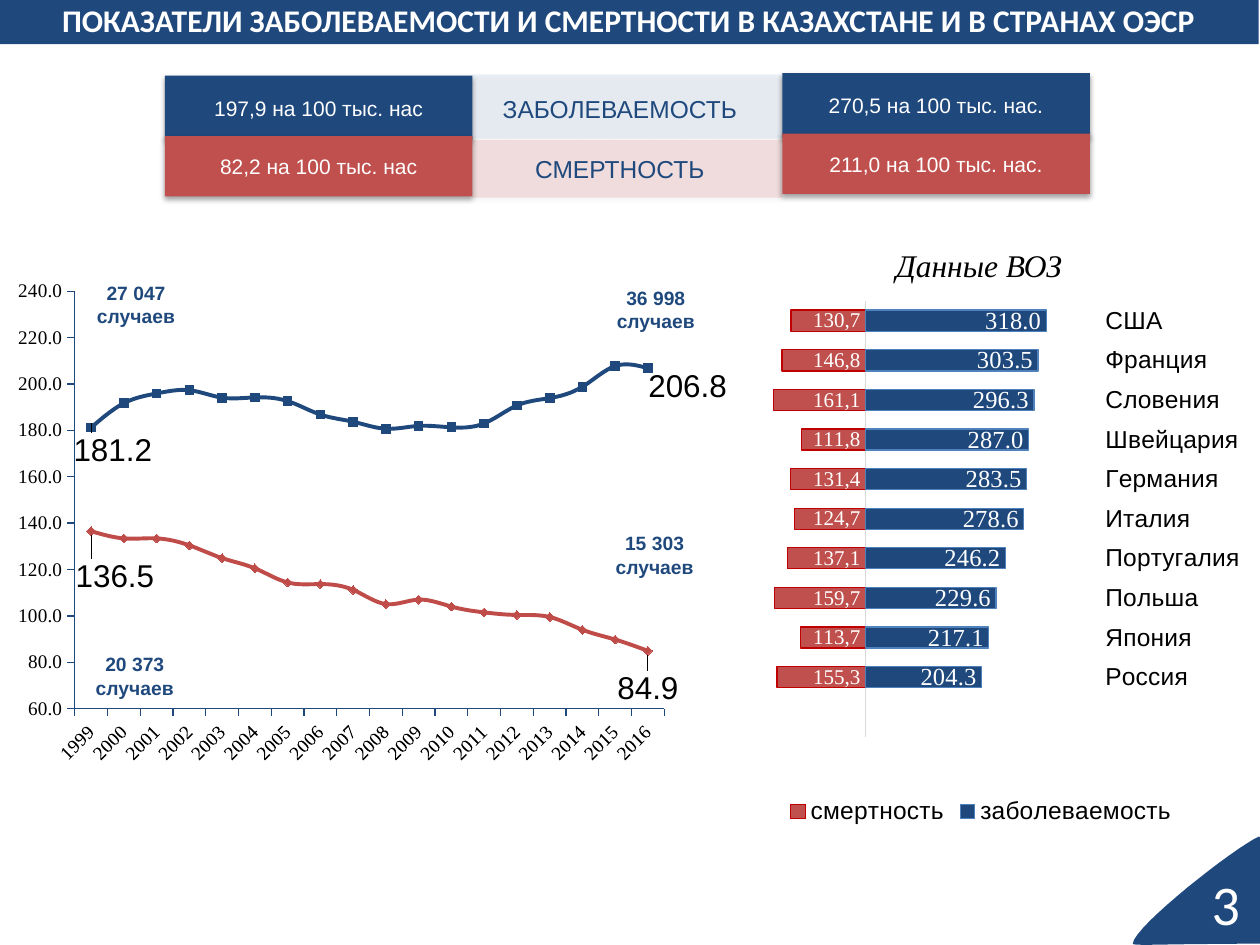
from lxml.etree import SubElement
from pptx import Presentation
from pptx.chart.data import CategoryChartData
from pptx.dml.color import RGBColor
from pptx.enum.chart import XL_CHART_TYPE as ChartType, XL_LABEL_POSITION as LabelPos
from pptx.enum.chart import XL_LEGEND_POSITION as LegendPos, XL_MARKER_STYLE as Marker
from pptx.enum.chart import XL_TICK_LABEL_POSITION as TickLabelPos, XL_TICK_MARK as TickMark
from pptx.enum.shapes import MSO_SHAPE as Shape
from pptx.enum.text import MSO_ANCHOR as Anchor, PP_ALIGN as Align
from pptx.oxml import parse_xml
from pptx.oxml.ns import nsdecls, qn
from pptx.util import Inches, Pt

NAVY = RGBColor(0x1F, 0x49, 0x7D)
RED = RGBColor(0xC0, 0x50, 0x4D)
LINE_RED = RGBColor(0xBF, 0x4C, 0x48)
DARK_RED = RGBColor(0xC0, 0x00, 0x00)
BLUE = RGBColor(0x4F, 0x81, 0xBD)
GREY = RGBColor(0xD9, 0xD9, 0xD9)
BLACK = RGBColor(0, 0, 0)
WHITE = RGBColor(255, 255, 255)
SERIF = "Times New Roman"

TITLE = "ПОКАЗАТЕЛИ ЗАБОЛЕВАЕМОСТИ И СМЕРТНОСТИ В КАЗАХСТАНЕ И В СТРАНАХ ОЭСР"
# left, top, incidence, mortality
RATES = [
    (6.21, 0.58, "270,5 на 100 тыс. нас.", "211,0 на 100 тыс. нас."),
    (1.31, 0.6, "197,9 на 100 тыс. нас", "82,2 на 100 тыс. нас"),
]
CASES = [
    ("20 373\nслучаев", (0.6, 5.14, 0.94, 0.45)),
    ("15 303\nслучаев", (4.6, 4.18, 1.19, 0.45)),
    ("27 047\nслучаев", (0.66, 2.19, 0.84, 0.45)),
    ("36 998\nслучаев", (4.72, 2.23, 0.97, 0.45)),
]
YEARS = [str(year) for year in range(1999, 2017)]
# name, values, colour, marker colour, marker, label side, label shifts by point
TRENDS = [
    ("Series 1", [181.2, 191.7, 195.9, 197.3, 194.1, 194.2, 192.6, 186.8, 183.7,
                  180.7, 181.9, 181.3, 183, 190.7, 193.9, 198.8, 207.7, 206.8],
     NAVY, NAVY, Marker.SQUARE, LabelPos.ABOVE, {0: (0.03, 0.1), 17: (0.055, 0.09)}),
    ("Series 2", [136.5, 133.4, 133.4, 130.4, 124.9, 120.5, 114.4, 113.7, 111.2,
                  105.1, 107, 104, 101.5, 100.4, 99.5, 94, 89.8, 84.9],
     LINE_RED, RED, Marker.DIAMOND, LabelPos.BELOW, {0: (0.033, 0.036), 17: (0, 0.02)}),
]
# country, mortality, incidence; the first row is left empty
COUNTRIES = [
    ("", None, None), ("Россия", 155.3, 204.3), ("Япония", 113.7, 217.1),
    ("Польша", 159.7, 229.6), ("Португалия", 137.1, 246.2), ("Италия", 124.7, 278.6),
    ("Германия", 131.4, 283.5), ("Швейцария", 111.8, 287), ("Словения", 161.1, 296.3),
    ("Франция", 146.8, 303.5), ("США", 130.7, 318),
]
CORNER_START = (8.99, 7.49)
CORNER_CURVES = [
    ((9, 7.35), (9.81, 6.72), (9.99, 6.64)),
    ((10.01, 6.64), (10, 6.69), (10.01, 6.83)),
    ((10.01, 6.97), (10, 7.26), (10, 7.49)),
    ((9.25, 7.49), (8.99, 7.51), (8.99, 7.49)),
]


def set_font(font, size, color, name="Arial", bold=False, italic=False):
    font.size, font.name, font.bold, font.italic = Pt(size), name, bold, italic
    font.color.rgb = color


def write(shape, text, size, color, align=Align.CENTER, anchor=Anchor.TOP,
          inset=(0.1, 0.05), gap=0, **style):
    frame = shape.text_frame
    frame.word_wrap, frame.vertical_anchor = True, anchor
    frame.margin_left = frame.margin_right = Inches(inset[0])
    frame.margin_top = frame.margin_bottom = Inches(inset[1])
    for number, line in enumerate(text.split("\n")):
        para = frame.add_paragraph() if number else frame.paragraphs[0]
        para.alignment = align
        if number and gap:
            para.space_before = Pt(gap)
        span = para.add_run()
        span.text = line
        set_font(span.font, size, color, **style)


def add_text(page, area, text, size, color, **style):
    write(page.shapes.add_textbox(*map(Inches, area)), text, size, color, **style)


def add_block(page, area, color, alpha=None, shadow=True):
    box = page.shapes.add_shape(Shape.RECTANGLE, *map(Inches, area))
    box.shadow.inherit = False
    box.fill.solid()
    box.fill.fore_color.rgb = color
    box.line.fill.background()
    properties = box._element.spPr
    if alpha:
        fill = properties.find(qn("a:solidFill"))
        SubElement(fill[0], qn("a:alpha"), val=str(alpha * 1000))
    if shadow:
        properties.find(qn("a:effectLst")).append(parse_xml(
            f'<a:outerShdw {nsdecls("a")} blurRad="{Pt(3.1)}" dist="{Pt(1.6)}" dir="5400000">'
            '<a:srgbClr val="000000"><a:alpha val="38000"/></a:srgbClr></a:outerShdw>'))
    return box


def manual_layout(x, y, size=None):
    """Plot area layout when size is given, label shift otherwise."""
    tags = [("x", x), ("y", y)]
    if size:
        tags = [("layoutTarget", "inner"), ("xMode", "edge"), ("yMode", "edge"),
                *tags, ("w", size[0]), ("h", size[1])]
    body = "".join(f'<c:{tag} val="{value}"/>' for tag, value in tags)
    return parse_xml(f'<c:layout {nsdecls("c")}><c:manualLayout>{body}</c:manualLayout></c:layout>')


def add_chart(page, kind, area, categories, series, plot, size):
    data = CategoryChartData()
    data.categories = categories
    for name, values in series:
        data.add_series(name, values)
    chart = page.shapes.add_chart(kind, *map(Inches, area), data).chart
    chart.has_title = chart.has_legend = False
    set_font(chart.font, size, BLACK, SERIF)
    chart.value_axis.has_major_gridlines = False
    plot_area = chart._chartSpace.chart.plotArea
    for old in plot_area.findall(qn("c:layout")):
        plot_area.remove(old)
    plot_area.insert(0, manual_layout(*plot))
    chart.plots[0].vary_by_categories = False
    return chart


def add_trend_chart(page):
    chart = add_chart(page, ChartType.LINE_MARKERS, (0.02, 2.13, 5.75, 3.95), YEARS,
                      [trend[:2] for trend in TRENDS], (0.1, 0.046, (0.816, 0.839)), 18)
    for axis in (chart.category_axis, chart.value_axis):
        axis.major_tick_mark, axis.minor_tick_mark = TickMark.OUTSIDE, TickMark.NONE
        axis.format.line.color.rgb, axis.format.line.width = NAVY, Pt(0.75)
        set_font(axis.tick_labels.font, 11, BLACK, SERIF)
    chart.category_axis._element.find(qn("c:txPr"))[0].set("rot", "-2700000")
    axis = chart.value_axis
    axis.minimum_scale, axis.maximum_scale, axis.major_unit = 60, 240, 20
    axis.tick_labels.number_format, axis.tick_labels.number_format_is_linked = "0.0", False
    for series, (_, _, color, fill, style, side, shifts) in zip(chart.plots[0].series, TRENDS):
        series.smooth = True
        series.format.line.color.rgb, series.format.line.width = color, Pt(2.25)
        marker = series.marker
        marker.style, marker.size = style, 5
        marker.format.fill.solid()
        marker.format.fill.fore_color.rgb = marker.format.line.color.rgb = fill
        series.data_labels.show_value = False
        for point, shift in shifts.items():
            label = series.points[point].data_label
            set_font(label.font, 18, BLACK)
            label.position = side
            element = series.data_labels._element.xpath(f"c:dLbl[c:idx/@val={point}]")[0]
            element.insert(1, manual_layout(*shift))


def add_country_chart(page):
    names, mortality, incidence = zip(*COUNTRIES)
    left_bars = [None if rate is None else -rate for rate in mortality]
    chart = add_chart(page, ChartType.BAR_STACKED, (5.55, 2.32, 4.47, 4.27), names,
                      [("смертность", left_bars), ("заболеваемость", incidence)],
                      (0.093, 0.016, (0.606, 0.81)), 14)
    chart.has_legend = True
    chart.legend.position, chart.legend.include_in_layout = LegendPos.BOTTOM, False
    set_font(chart.legend.font, 14, BLACK)
    chart.value_axis.visible = False
    chart.value_axis.minimum_scale, chart.value_axis.maximum_scale = -200, 400
    axis = chart.category_axis
    axis.major_tick_mark = axis.minor_tick_mark = TickMark.NONE
    axis.tick_label_position = TickLabelPos.HIGH
    axis.format.line.color.rgb, axis.format.line.width = GREY, Pt(0.75)
    set_font(axis.tick_labels.font, 14, BLACK)
    bars = chart.plots[0]
    bars.gap_width, bars.overlap = 88, 100
    looks = [(RED, DARK_RED, 12, LabelPos.INSIDE_BASE), (NAVY, BLUE, 14, LabelPos.INSIDE_END)]
    for series, (fill, line, size, side) in zip(bars.series, looks):
        series.invert_if_negative = False
        series.format.fill.solid()
        series.format.fill.fore_color.rgb = fill
        series.format.line.color.rgb, series.format.line.width = line, Pt(0.75)
        labels = series.data_labels
        labels.show_value, labels.position = True, side
        labels.number_format, labels.number_format_is_linked = "0.0", False
        set_font(labels.font, size, WHITE, SERIF)
    for number, rate in enumerate(mortality):
        if rate is not None:
            label = bars.series[0].points[number].data_label
            span = label.text_frame.paragraphs[0].add_run()
            span.text = str(rate).replace(".", ",")
            set_font(span.font, 12, WHITE, SERIF)
            label.position = LabelPos.INSIDE_BASE


def add_corner(page, steps=16):
    """Navy page corner, its Bezier curves sampled as short segments."""
    points, start = [], CORNER_START
    for first, second, end in CORNER_CURVES:
        for t in (step / steps for step in range(1, steps + 1)):
            weights = ((1 - t) ** 3, 3 * t * (1 - t) ** 2, 3 * t * t * (1 - t), t ** 3)
            points.append(tuple(1000 * sum(w * p[i] for w, p in zip(weights, (start, first, second, end)))
                                for i in (0, 1)))
        start = end
    builder = page.shapes.build_freeform(*(1000 * c for c in CORNER_START), scale=914.4)
    builder.add_line_segments(points, close=True)
    corner = builder.convert_to_shape()
    corner.shadow.inherit = False
    corner.fill.solid()
    corner.fill.fore_color.rgb = NAVY
    corner.line.fill.background()


def main():
    deck = Presentation()
    deck.slide_width, deck.slide_height = Inches(10), Inches(7.5)
    page = deck.slides.add_slide(deck.slide_layouts[6])
    add_trend_chart(page)
    for text, area in CASES:
        add_text(page, area, text, 11, NAVY, bold=True, inset=(0.07, 0.04))
    add_country_chart(page)
    add_text(page, (6.53, 1.9, 2.48, 0.4), "Данные ВОЗ", 18, BLACK, name=SERIF, italic=True)
    add_block(page, (3.75, 0.59, 2.46, 0.51), BLUE, alpha=10)
    add_block(page, (3.75, 1.11, 2.46, 0.46), DARK_RED, alpha=10)
    for left, top, *texts in RATES:
        for text, color, offset, height in zip(texts, (NAVY, RED), (0, 0.48), (0.51, 0.48)):
            box = add_block(page, (left, top + offset, 2.44, height), color)
            write(box, text, 12, WHITE, anchor=Anchor.MIDDLE)
    add_text(page, (3.82, 0.7, 2.2, 0.98), "ЗАБОЛЕВАЕМОСТЬ\nСМЕРТНОСТЬ", 14, NAVY, gap=17)
    banner = add_block(page, (-0.01, -0.03, 10, 0.38), NAVY, shadow=False)
    write(banner, TITLE, 18, WHITE, anchor=Anchor.MIDDLE, name="Calibri", bold=True)
    add_corner(page)
    add_text(page, (9.42, 6.96, 0.52, 0.42), "3", 32, WHITE, name="Calibri",
             align=Align.RIGHT, anchor=Anchor.MIDDLE)
    deck.save("out.pptx")


if __name__ == "__main__":
    main()
